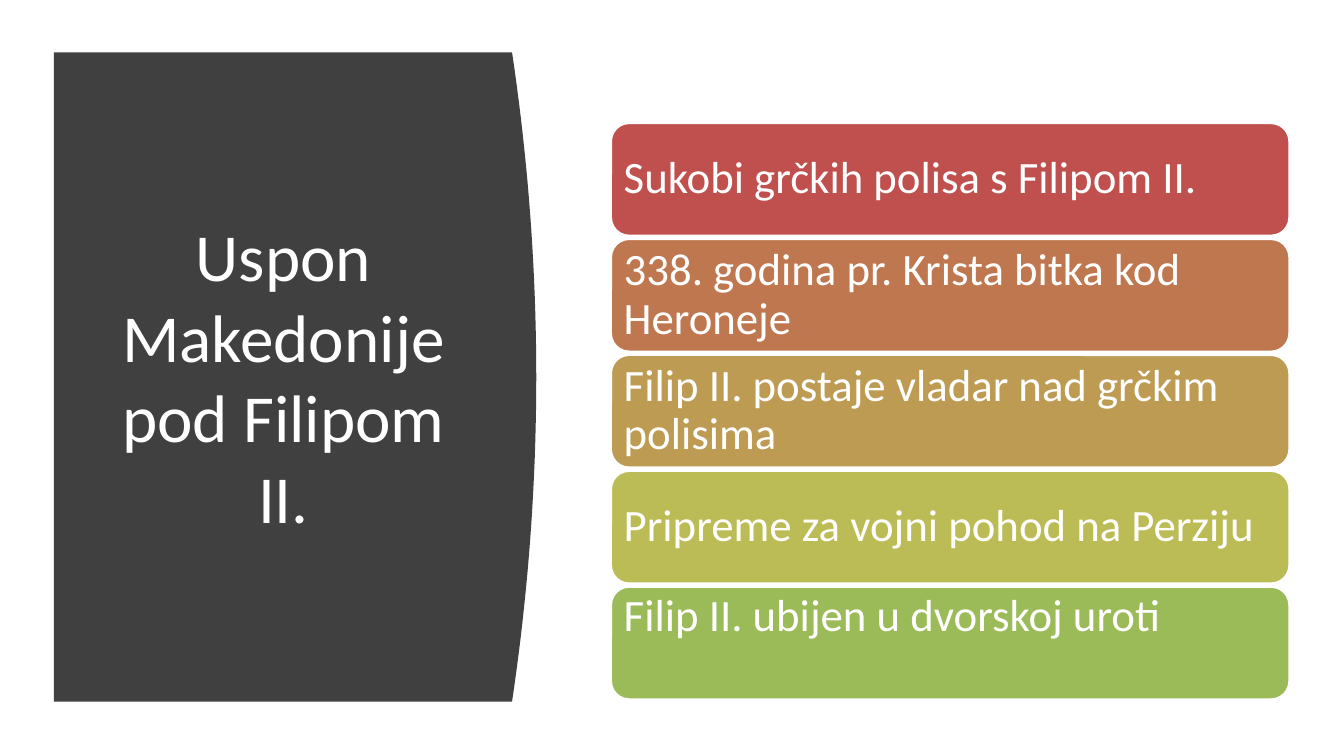
from dataclasses import dataclass

from pptx import Presentation
from pptx.dml.color import RGBColor
from pptx.enum.shapes import MSO_SHAPE
from pptx.enum.text import MSO_ANCHOR, PP_ALIGN
from pptx.util import Inches, Pt

ROUNDED = MSO_SHAPE.ROUNDED_RECTANGLE
MIDDLE = MSO_ANCHOR.MIDDLE
LEFT, CENTER = PP_ALIGN.LEFT, PP_ALIGN.CENTER


@dataclass(frozen=True)
class Theme:
    font: str = "Calibri"
    white: RGBColor = RGBColor(0xFF, 0xFF, 0xFF)
    panel: RGBColor = RGBColor(0x40, 0x40, 0x40)
    events: tuple = ("C0504D", "BF7750", "BD9B53", "BCBC56", "9BBB59")
    title_size: Pt = Pt(36)
    event_size: Pt = Pt(24)


theme = Theme()


def write(frame, text, size, align):
    frame.word_wrap = True
    frame.vertical_anchor = MIDDLE
    paragraph = frame.paragraphs[0]
    paragraph.text = text
    paragraph.alignment = align
    font = paragraph.runs[0].font
    font.name = theme.font
    font.size = size
    font.color.rgb = theme.white
    return paragraph


prs = Presentation()
prs.slide_width = Inches(10)
prs.slide_height = Inches(10 * 9 / 16)
slide = prs.slides.add_slide(prs.slide_layouts[6])

panel_left, panel_top, panel_height = 0.4, 0.39, 4.83
edge, bulge, steps = 3.81, 0.18, 40
curve = []
for step in range(steps + 1):
    t = step / steps
    x = edge + bulge * 4 * t * (1 - t)
    curve.append((Inches(x), Inches(panel_top + panel_height * t)))

outline = slide.shapes.build_freeform(Inches(panel_left), Inches(panel_top))
outline.add_line_segments(
    curve + [(Inches(panel_left), Inches(panel_top + panel_height))], close=True
)
panel = outline.convert_to_shape()
panel.shadow.inherit = False
panel.fill.solid()
panel.fill.fore_color.rgb = theme.panel
panel.line.fill.background()

title = slide.shapes.add_textbox(Inches(0.71), Inches(0.83), Inches(2.8), Inches(3.93))
write(title.text_frame, "Uspon Makedonije pod Filipom II.", theme.title_size, CENTER)

events = [
    ("Sukobi grčkih polisa s Filipom II.", 0.06),
    ("338. godina pr. Krista bitka kod Heroneje", 0.06),
    ("Filip II. postaje vladar nad grčkim polisima", 0.06),
    ("Pripreme za vojni pohod na Perziju", 0.06),
    ("Filip II. ubijen u dvorskoj uroti", 0.45),
]
first_top, last_top = 0.91, 4.36
pitch = (last_top - first_top) / (len(events) - 1)
for row, ((text, bottom_inset), color) in enumerate(zip(events, theme.events)):
    event = slide.shapes.add_shape(
        ROUNDED, Inches(4.54), Inches(first_top + row * pitch), Inches(5.06), Inches(0.85)
    )
    event.shadow.inherit = False
    event.fill.solid()
    event.fill.fore_color.rgb = RGBColor.from_string(color)
    event.line.color.rgb = theme.white
    event.line.width = Pt(2)
    frame = event.text_frame
    frame.margin_left = frame.margin_right = frame.margin_top = Inches(0.06)
    frame.margin_bottom = Inches(bottom_inset)
    write(frame, text, theme.event_size, LEFT).line_spacing = 0.9

prs.save("out.pptx")
